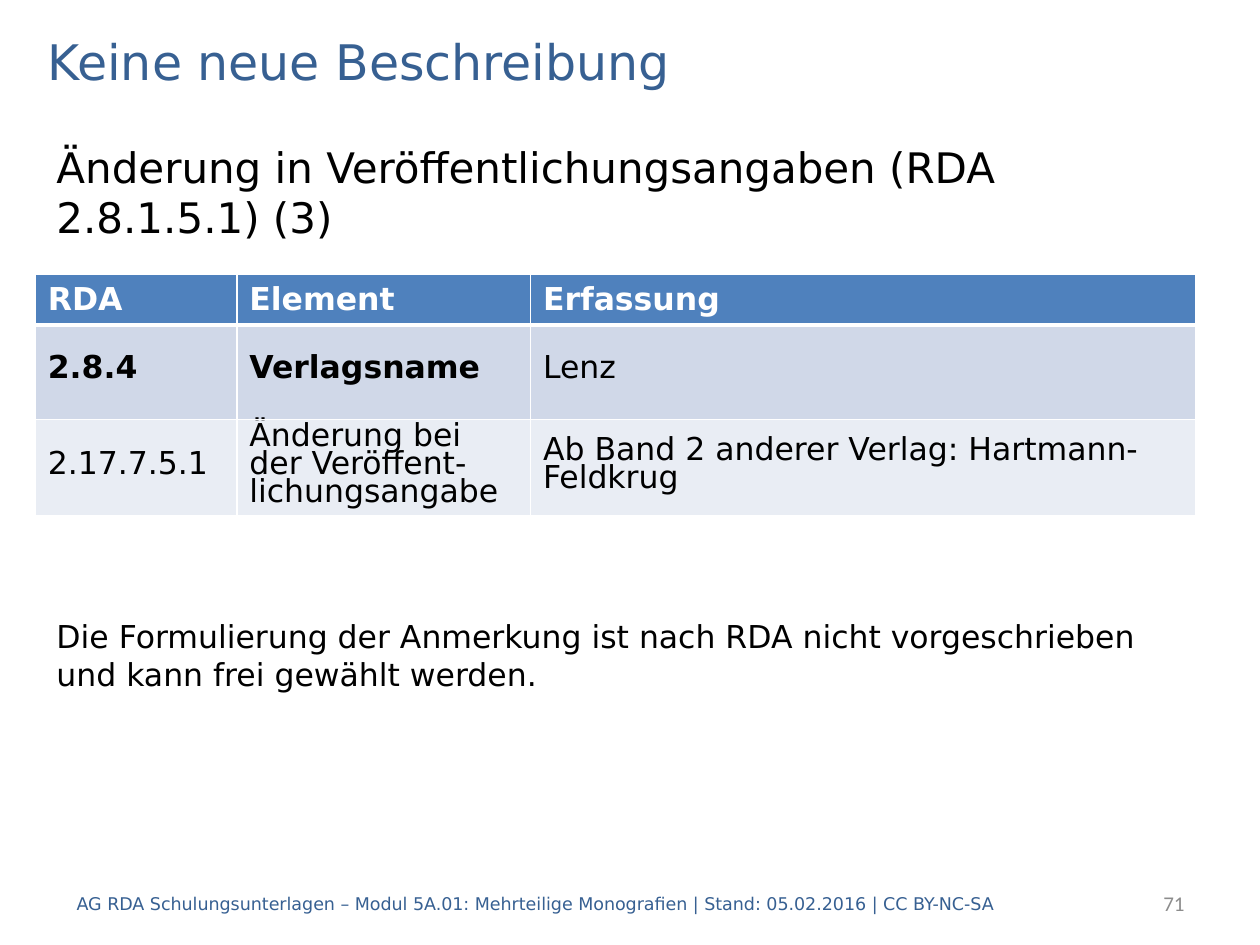
from lxml.etree import SubElement
from pptx import Presentation
from pptx.dml.color import RGBColor
from pptx.enum.text import MSO_ANCHOR as Anchor, PP_ALIGN as Align
from pptx.oxml.ns import qn
from pptx.util import Inches, Pt

SANS = "DejaVu Sans"
BLUE, BLACK, WHITE, GREY = "376092", "000000", "FFFFFF", "8C8C8C"
HEADER_FILL, ROW_FILLS = "4F81BD", ("D0D8E8", "E9EDF4")
COLUMN_WIDTHS = (1.6, 2.33, 5.28)
ROW_HEIGHTS = (0.37, 0.75, 0.75)
ENTRIES = (
    ("RDA", "Element", "Erfassung"),
    ("2.8.4", "Verlagsname", "Lenz"),
    ("2.17.7.5.1", "Änderung bei der Veröffent-lichungsangabe",
     "Ab Band 2 anderer Verlag: Hartmann-Feldkrug"),
)
BOLD_ENTRIES = {(0, 0), (0, 1), (0, 2), (1, 0), (1, 1)}


def color(hex_value):
    """Turn a hex string into a colour."""
    return RGBColor.from_string(hex_value)


def set_font(paragraph, size, hex_value, name=SANS, bold=False):
    """Set the font of a whole paragraph."""
    font = paragraph.font
    font.name, font.size, font.bold = name, Pt(size), bold
    font.color.rgb = color(hex_value)


def add_text(slide, box, wording, size, hex_value, name=SANS,
             anchor=Anchor.TOP, align=Align.LEFT):
    """Place one wrapped paragraph in a box given in inches."""
    frame = slide.shapes.add_textbox(*map(Inches, box)).text_frame
    frame.word_wrap = True
    frame.vertical_anchor = anchor
    paragraph = frame.paragraphs[0]
    paragraph.text, paragraph.alignment = wording, align
    set_font(paragraph, size, hex_value, name)


def set_borders(cell, bottom_width):
    """Draw white cell borders, ahead of the cell's fill."""
    properties = cell._tc.get_or_add_tcPr()
    for side, width in (("L", 1), ("R", 1), ("T", 1), ("B", bottom_width)):
        border = SubElement(properties, qn(f"a:ln{side}"), w=str(Pt(width)))
        fill = SubElement(border, qn("a:solidFill"))
        SubElement(fill, qn("a:srgbClr"), val=WHITE)


def format_cell(cell, wording, is_header, fill, bold):
    """Fill one cell as a header or an entry."""
    set_borders(cell, 3 if is_header else 1)
    cell.fill.solid()
    cell.fill.fore_color.rgb = color(fill)
    cell.text = wording
    paragraph = cell.text_frame.paragraphs[0]
    set_font(paragraph, 18, WHITE if is_header else BLACK, bold=bold)
    if not is_header:
        cell.vertical_anchor = Anchor.MIDDLE
        paragraph.line_spacing = Pt(16)
        paragraph.space_before = paragraph.space_after = Pt(6)


def add_entry_table(slide, left, top):
    """Place the table of RDA elements at a corner."""
    size = sum(COLUMN_WIDTHS), sum(ROW_HEIGHTS)
    table = slide.shapes.add_table(
        len(ROW_HEIGHTS), len(COLUMN_WIDTHS),
        *map(Inches, (left, top, *size))).table
    for column, width in zip(table.columns, COLUMN_WIDTHS):
        column.width = Inches(width)
    for r, (height, entries) in enumerate(zip(ROW_HEIGHTS, ENTRIES)):
        table.rows[r].height = Inches(height)
        fill = ROW_FILLS[r - 1] if r else HEADER_FILL
        for c, wording in enumerate(entries):
            format_cell(table.cell(r, c), wording, r == 0, fill,
                        (r, c) in BOLD_ENTRIES)


def add_footer(slide, top, height):
    """Place the source line and the page number."""
    add_text(slide, (0.51, top, 7.56, height),
             "AG RDA Schulungsunterlagen – Modul 5A.01: Mehrteilige "
             "Monografien | Stand: 05.02.2016 | CC BY-NC-SA",
             10, BLUE, anchor=Anchor.MIDDLE)
    add_text(slide, (7.91, top, 1.59, height), "71", 12, GREY, "Calibri",
             Anchor.MIDDLE, Align.RIGHT)


def add_body(slide, left, width):
    """Place the subtitle, the table and the remark."""
    add_text(slide, (left, 1.07, width, 0.91),
             "Änderung in Veröffentlichungsangaben (RDA 2.8.1.5.1) (3)",
             24, BLACK)
    add_entry_table(slide, 0.28, 2.18)
    add_text(slide, (left, 4.85, width, 0.71),
             "Die Formulierung der Anmerkung ist nach RDA nicht "
             "vorgeschrieben und kann frei gewählt werden.", 18, BLACK)


def main():
    """Build and save the slide."""
    deck = Presentation()
    deck.slide_width, deck.slide_height = Inches(10), Inches(7.5)
    slide = deck.slides.add_slide(deck.slide_layouts[6])
    add_text(slide, (0.28, 0.2, 9.45, 0.56), "Keine neue Beschreibung",
             28, BLUE, anchor=Anchor.MIDDLE)
    add_body(slide, 0.35, 9.13)
    add_footer(slide, 6.97, 0.4)
    deck.save("out.pptx")


if __name__ == "__main__":
    main()
